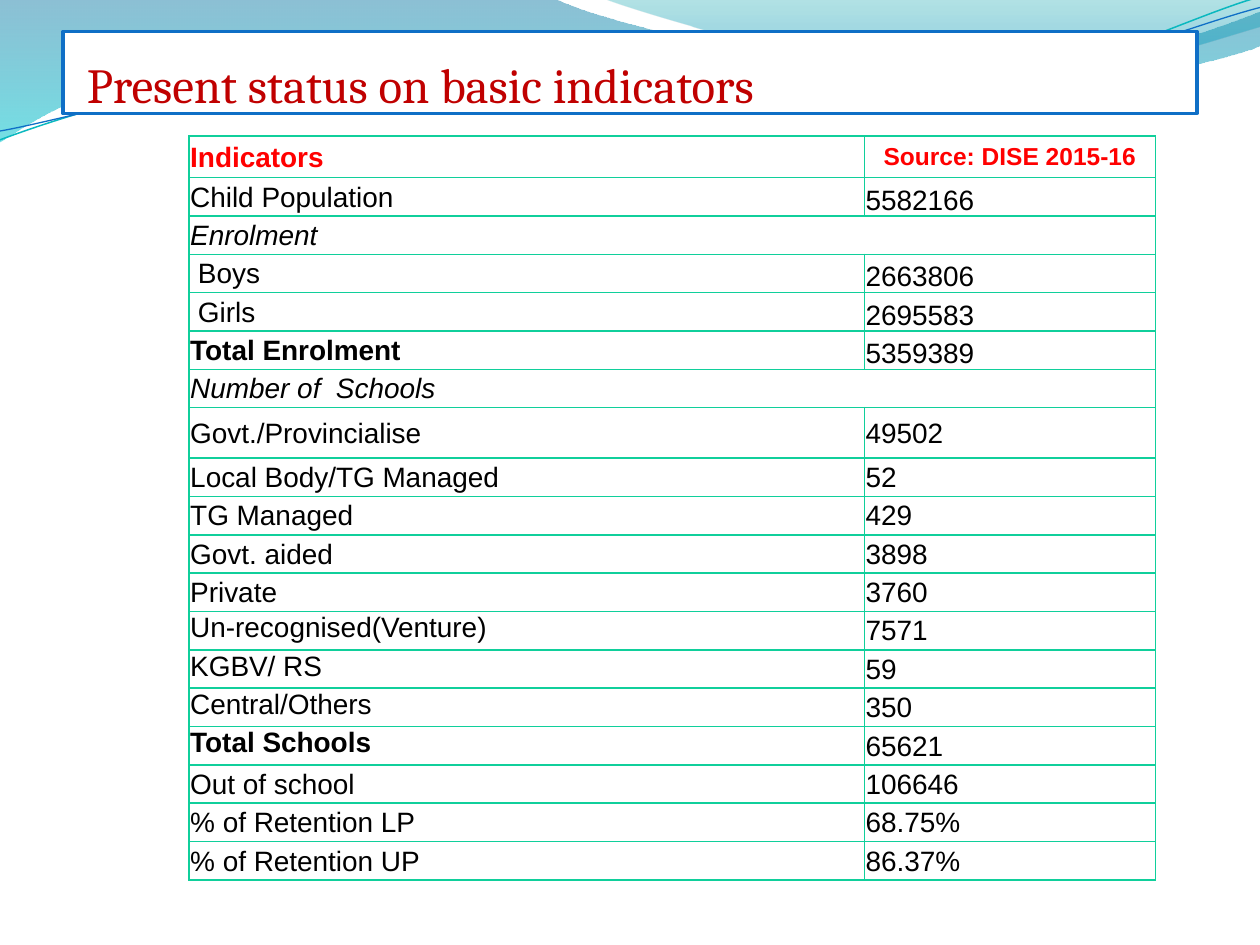
"""Build a slide with a table of basic school indicators under a wave header."""
from math import cos, radians, sin
from lxml.etree import SubElement
from pptx import Presentation
from pptx.dml.color import RGBColor
from pptx.enum.shapes import MSO_SHAPE
from pptx.enum.text import MSO_ANCHOR, PP_ALIGN
from pptx.oxml import parse_xml
from pptx.oxml.ns import nsdecls, qn
from pptx.util import Inches, Pt

WHITE = RGBColor(0xFF, 0xFF, 0xFF)
BLACK = RGBColor(0, 0, 0)
RED = RGBColor(0xFF, 0, 0)
DARK_RED = RGBColor(0xC0, 0, 0)
BLUE = RGBColor(0x0F, 0x6F, 0xC6)
TEAL = RGBColor(0x0A, 0xB8, 0xBF)
GREEN = RGBColor(0x10, 0xCF, 0x9B)
DEEP_BLUE = RGBColor(0, 0x74, 0xA1)
AQUA = RGBColor(0, 0xC6, 0xCF)
SEA = RGBColor(0, 0xA1, 0xA9)
SKY = RGBColor(0, 0x8B, 0xBF)

TOP, MIDDLE, BOTTOM = MSO_ANCHOR.TOP, MSO_ANCHOR.MIDDLE, MSO_ANCHOR.BOTTOM
TITLE = "Present status on basic indicators"
HEADERS = [("Indicators", 16, None), ("Source: DISE 2015-16", 14, PP_ALIGN.CENTER)]
ROWS = [
    ("Child Population", "5582166", MIDDLE, BOTTOM),
    ("Enrolment", None, MIDDLE, MIDDLE),
    (" Boys", "2663806", MIDDLE, BOTTOM),
    (" Girls", "2695583", MIDDLE, BOTTOM),
    ("Total Enrolment", "5359389", MIDDLE, BOTTOM),
    ("Number of  Schools", None, MIDDLE, MIDDLE),
    ("Govt./Provincialise", "49502", MIDDLE, MIDDLE),
    ("Local Body/TG Managed", "52", MIDDLE, MIDDLE),
    ("TG Managed", "429", MIDDLE, MIDDLE),
    ("Govt. aided", "3898", MIDDLE, MIDDLE),
    ("Private", "3760", MIDDLE, MIDDLE),
    ("Un-recognised(Venture)", "7571", TOP, MIDDLE),
    ("KGBV/ RS", "59", TOP, MIDDLE),
    ("Central/Others", "350", TOP, MIDDLE),
    ("Total Schools", "65621", TOP, MIDDLE),
    ("Out of school", "106646", MIDDLE, MIDDLE),
    ("% of Retention LP", "68.75%", MIDDLE, MIDDLE),
    ("% of Retention UP", "86.37%", MIDDLE, MIDDLE),
]
COLUMN_WIDTHS = (5.36, 2.31)
TABLE_HEIGHT = 5.91
TALL_ROWS = {0: 0.33, 7: 0.4}

# Each step is a line end (2 numbers) or a Bézier curve (6 numbers).
BANDS = [
    ([(0, 0), (4.4, -0.01), (4.76, 0.17, 6.64, 0.63, 7.58, 0.63),
      (8.53, 0.63, 9.58, 0.26, 10, 0.09), (10.01, 0.36),
      (9.83, 0.44, 8.7, 0.76, 7.46, 0.75), (6.22, 0.75, 3.82, 0.28, 2.57, 0.34),
      (1.29, 0.36, 0.46, 0.83, -0.01, 1.13), (0, 0)],
     [(0, DEEP_BLUE, 45), (1, AQUA, 55)]),
    ([(4.79, -0.01), (5.09, 0.11, 6.82, 0.62, 7.69, 0.65),
      (8.56, 0.69, 9.61, 0.32, 10, 0.21), (10, 0), (4.79, -0.01)],
     [(0, SEA, 30), (0.8, SKY, 45)]),
]
STRAND_TURN = -2.7
STRANDS = [
    ([(0, 1.11), (0.48, 0.93, 1.58, 0.57, 2.77, 0.52),
      (3.95, 0.47, 5.93, 0.89, 7.13, 0.8), (8.33, 0.71, 9.38, 0.15, 9.98, -0.02)],
     (4.99, 0.58), TEAL, 0.85),
    ([(0, 1.04), (0.47, 0.96, 1.64, 0.61, 2.83, 0.56),
      (4.03, 0.51, 5.97, 0.84, 7.17, 0.75), (8.36, 0.67, 9.41, 0.21, 10, 0.06)],
     (5, 0.59), BLUE, 0.75),
]


def add_outline(page, steps, close):
    points = [(Inches(x), Inches(y)) for step in steps for x, y in zip(step[::2], step[1::2])]
    builder = page.shapes.build_freeform(*points[0])
    builder.add_line_segments(points[1:], close=close)
    shape = builder.convert_to_shape()
    shape.shadow.inherit = False
    segments = iter(list(shape._element.iter(qn("a:lnTo"))))
    for step in steps[1:]:
        segment = next(segments)
        if len(step) == 6:
            segment.tag = qn("a:cubicBezTo")
            for _ in range(2):
                extra = next(segments)
                segment.append(extra[0])
                extra.getparent().remove(extra)
    return shape


def add_band(page, steps, stops):
    band = add_outline(page, steps, True)
    band.line.fill.background()
    band.fill.gradient()
    band.fill.gradient_angle = 270
    for stop, (position, color, _) in zip(band.fill.gradient_stops, stops):
        stop.position = position
        stop.color.rgb = color
    for node, (_, _, opacity) in zip(band._element.spPr.iter(qn("a:srgbClr")), stops):
        SubElement(node, qn("a:alpha")).set("val", str(opacity * 1000))


def turn_step(step, center, degrees):
    c, s = cos(radians(degrees)), sin(radians(degrees))
    turned = []
    for x, y in zip(step[::2], step[1::2]):
        dx, dy = x - center[0], y - center[1]
        turned += [center[0] + dx * c - dy * s, center[1] + dx * s + dy * c]
    return turned


def add_strand(page, steps, center, color, width):
    level = [turn_step(step, center, -STRAND_TURN) for step in steps]
    strand = add_outline(page, level, False)
    strand.rotation = STRAND_TURN
    strand.fill.background()
    strand.line.color.rgb = color
    strand.line.width = Pt(width)


def add_span(paragraph, text, size, font, color, bold=False, italic=False):
    span = paragraph.add_run()
    span.text = text
    span.font.size = Pt(size)
    span.font.name = font
    span.font.color.rgb = color
    span.font.bold = bold
    span.font.italic = italic


def add_title(page):
    box = page.shapes.add_shape(MSO_SHAPE.RECTANGLE, Inches(0.5), Inches(0.25),
                                Inches(9), Inches(0.65))
    box.shadow.inherit = False
    box.fill.solid()
    box.fill.fore_color.rgb = WHITE
    box.line.color.rgb = BLUE
    box.line.width = Pt(2)
    SubElement(box._element.spPr.find(qn("a:ln")), qn("a:round"))
    frame = box.text_frame
    frame.word_wrap = True
    frame.vertical_anchor = BOTTOM
    frame.margin_left = frame.margin_right = frame.margin_bottom = 0
    frame.margin_top = Inches(0.05)
    paragraph = frame.paragraphs[0]
    paragraph.alignment = PP_ALIGN.LEFT
    paragraph.line_spacing = 2.0
    properties = paragraph._p.get_or_add_pPr()
    properties.set("marL", str(Inches(0.19)))
    properties.set("indent", "0")
    add_span(paragraph, TITLE, 28, "Cambria", DARK_RED)


def style_cell(cell, anchor):
    cell.fill.background()
    cell.vertical_anchor = anchor
    cell.margin_left = cell.margin_right = cell.margin_top = Inches(0.01)
    cell.margin_bottom = 0
    for index, side in enumerate(("lnL", "lnR", "lnT", "lnB")):
        border = parse_xml(f'<a:{side} {nsdecls("a")} w="{Pt(1)}"><a:solidFill>'
                           f'<a:srgbClr val="{GREEN}"/></a:solidFill></a:{side}>')
        cell._tc.get_or_add_tcPr().insert(index, border)


def add_indicator_table(page):
    count = len(ROWS) + 1
    table = page.shapes.add_table(count, 2, Inches(1.5), Inches(1.08),
                                  Inches(sum(COLUMN_WIDTHS)), Inches(TABLE_HEIGHT)).table
    table.first_row = table.horz_banding = False
    for column, width in zip(table.columns, COLUMN_WIDTHS):
        column.width = Inches(width)
    usual = (TABLE_HEIGHT - sum(TALL_ROWS.values())) / (count - len(TALL_ROWS))
    for index, row in enumerate(table.rows):
        row.height = Inches(TALL_ROWS.get(index, usual))
    for column, (text, size, alignment) in enumerate(HEADERS):
        cell = table.cell(0, column)
        style_cell(cell, MIDDLE)
        paragraph = cell.text_frame.paragraphs[0]
        paragraph.alignment = alignment
        add_span(paragraph, text, size, "Arial", RED, bold=True)
    for index, (label, value, *anchors) in enumerate(ROWS, 1):
        cells = [table.cell(index, column) for column in (0, 1)]
        for cell, anchor in zip(cells, anchors):
            style_cell(cell, anchor)
        add_span(cells[0].text_frame.paragraphs[0], label, 16, "Arial", BLACK,
                 bold=label.startswith("Total"), italic=value is None)
        if value is None:
            cells[0].merge(cells[1])
        else:
            add_span(cells[1].text_frame.paragraphs[0], value, 16, "Arial", BLACK)


def main():
    deck = Presentation()
    deck.slide_width, deck.slide_height = Inches(10), Inches(7.5)
    page = deck.slides.add_slide(deck.slide_layouts[6])
    for band in BANDS:
        add_band(page, *band)
    for strand in STRANDS:
        add_strand(page, *strand)
    add_title(page)
    add_indicator_table(page)
    deck.save("out.pptx")


if __name__ == "__main__":
    main()
